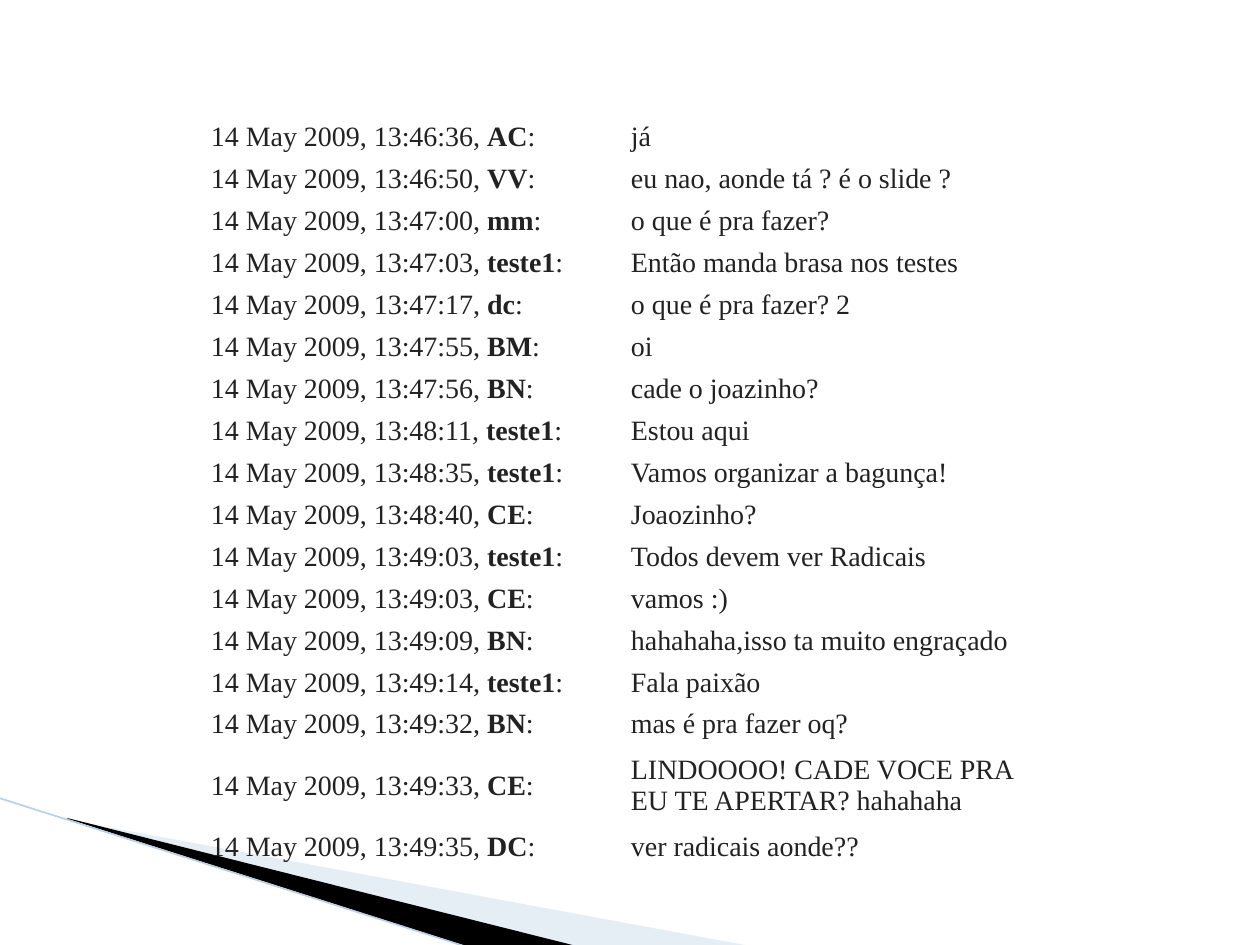
import pptx
import pptx.util
import pptx.dml.color
import pptx.enum.shapes
import pptx.enum.text
import pptx.oxml
import pptx.oxml.ns

EMU_PER_PX = 914400 / 126
COLORS = {"text": "222222", "pale": "C0D3E6", "black": "000000", "edge": "BBD0E3"}
FONT = "Times New Roman"
NO_GRID_STYLE = "{2D5ABB26-0587-4C30-8999-92F81FD0307C}"
DATE = "14 May 2009"

ROW_H, TALL_ROW_H, COL_W = 42, 81, 420
TALL_ROW = 15  # its message takes two lines

MESSAGES = [
    ("13:46:36", "AC", "já"),
    ("13:46:50", "VV", "eu nao, aonde tá ? é o slide ?"),
    ("13:47:00", "mm", "o que é pra fazer?"),
    ("13:47:03", "teste1", "Então manda brasa nos testes"),
    ("13:47:17", "dc", "o que é pra fazer? 2"),
    ("13:47:55", "BM", "oi"),
    ("13:47:56", "BN", "cade o joazinho?"),
    ("13:48:11", "teste1", "Estou aqui"),
    ("13:48:35", "teste1", "Vamos organizar a bagunça!"),
    ("13:48:40", "CE", "Joaozinho?"),
    ("13:49:03", "teste1", "Todos devem ver Radicais"),
    ("13:49:03", "CE", "vamos :)"),
    ("13:49:09", "BN", "hahahaha,isso ta muito engraçado"),
    ("13:49:14", "teste1", "Fala paixão"),
    ("13:49:32", "BN", "mas é pra fazer oq?"),
    ("13:49:33", "CE", "LINDOOOO! CADE VOCE PRA EU TE APERTAR? hahahaha"),
    ("13:49:35", "DC", "ver radicais aonde??"),
]


def px(n):
    return pptx.util.Emu(round(n * EMU_PER_PX))


def rgb(name):
    return pptx.dml.color.RGBColor.from_string(COLORS[name])


def add_wedge(slide, points, color, opacity=None):
    start, *rest = [(px(x), px(y)) for x, y in points]
    builder = slide.shapes.build_freeform(*start)
    builder.add_line_segments(rest, close=True)
    sp = builder.convert_to_shape()
    sp.shadow.inherit = False
    sp.line.fill.background()
    sp.fill.solid()
    sp.fill.fore_color.rgb = rgb(color)
    if opacity is not None:
        clr = sp.fill._xPr.find(".//" + pptx.oxml.ns.qn("a:srgbClr"))
        alpha = pptx.oxml.parse_xml(
            f'<a:alpha {pptx.oxml.ns.nsdecls("a")} val="{opacity * 1000}"/>')
        clr.append(alpha)


def add_edge(slide, start, end, color, width):
    line = slide.shapes.add_connector(
        pptx.enum.shapes.MSO_CONNECTOR.STRAIGHT, *map(px, start + end))
    line.line.color.rgb = rgb(color)
    line.line.width = pptx.util.Pt(width)
    line._element.spPr.append(
        pptx.oxml.parse_xml(f'<a:effectLst {pptx.oxml.ns.nsdecls("a")}/>'))


def fill_cell(cell, runs):
    """Write (text, bold) runs into a table cell."""
    cell.fill.background()
    cell.vertical_anchor = pptx.enum.text.MSO_ANCHOR.MIDDLE
    cell.margin_left = cell.margin_right = px(1)
    cell.margin_top = cell.margin_bottom = px(1)
    p = cell.text_frame.paragraphs[0]
    for text, bold in runs:
        r = p.add_run()
        r.text = text
        r.font.name = FONT
        r.font.size = pptx.util.Pt(16)
        r.font.bold = bold
        r.font.color.rgb = rgb("text")


def add_chat_table(slide, left, top):
    heights = [TALL_ROW_H if i == TALL_ROW else ROW_H for i in range(len(MESSAGES))]
    frame = slide.shapes.add_table(
        len(MESSAGES), 2, px(left), px(top), px(2 * COL_W), px(sum(heights)))
    table = frame.table
    table.first_row = table.horz_banding = False
    table._tbl.tblPr.find(pptx.oxml.ns.qn("a:tableStyleId")).text = NO_GRID_STYLE
    for row, height, (time, author, message) in zip(table.rows, heights, MESSAGES):
        row.height = px(height)
        fill_cell(row.cells[0],
                  [(f"{DATE}, {time}, ", False), (author, True), (":", False)])
        fill_cell(row.cells[1], [(message, False)])


def main():
    prs = pptx.Presentation()
    prs.slide_width, prs.slide_height = px(1260), px(945)
    slide = prs.slides.add_slide(prs.slide_layouts[6])

    # Corner decoration
    add_wedge(slide, [(69, 820), (750, 946), (575, 946), (69, 819)], "pale", 40)
    add_wedge(slide, [(67, 818), (576, 946), (469, 947), (68, 819)], "black")
    add_edge(slide, (-1, 798), (467, 947), "edge", 0.95)

    # Chat log
    add_chat_table(slide, 210, 116)
    prs.save("out.pptx")


if __name__ == "__main__":
    main()
